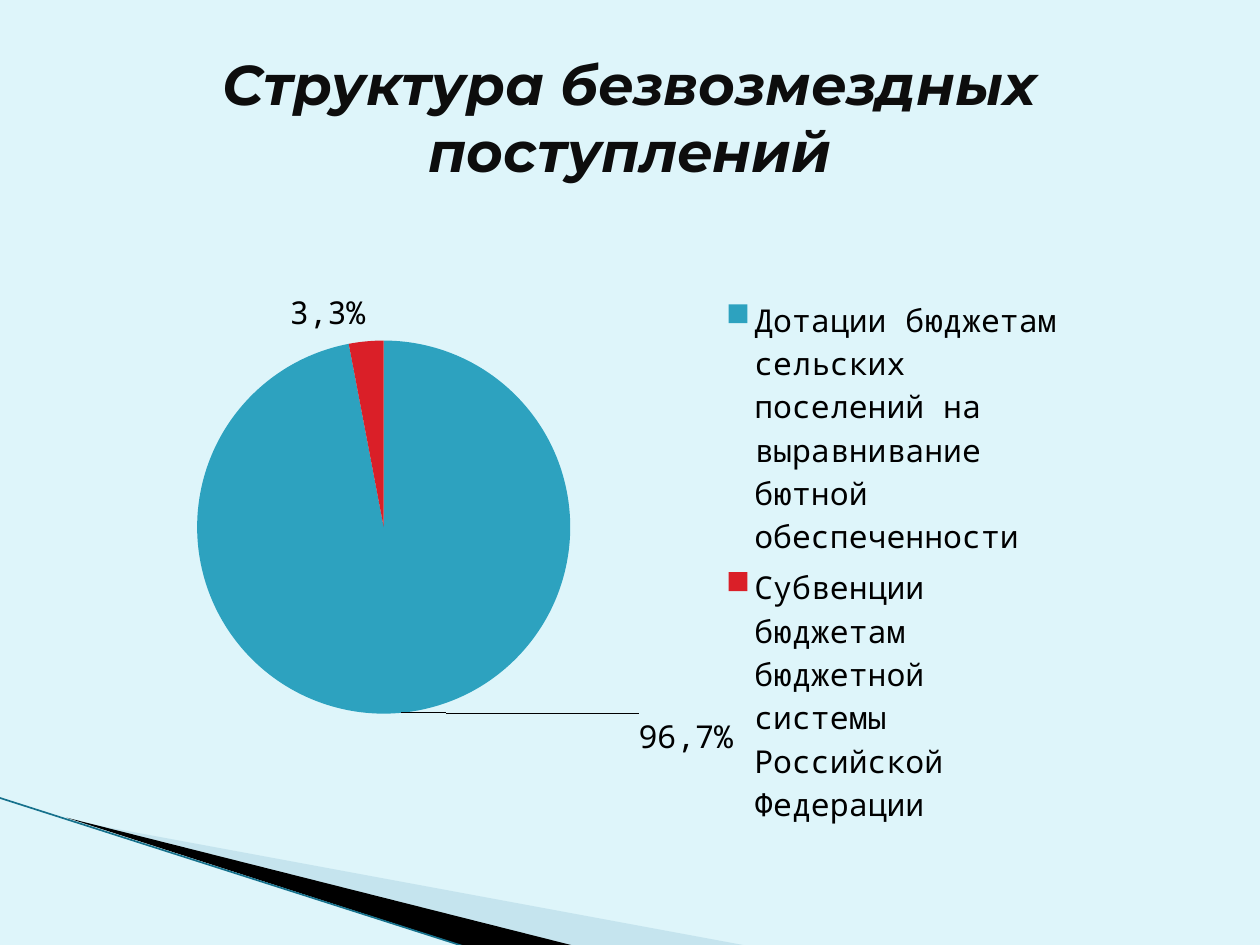
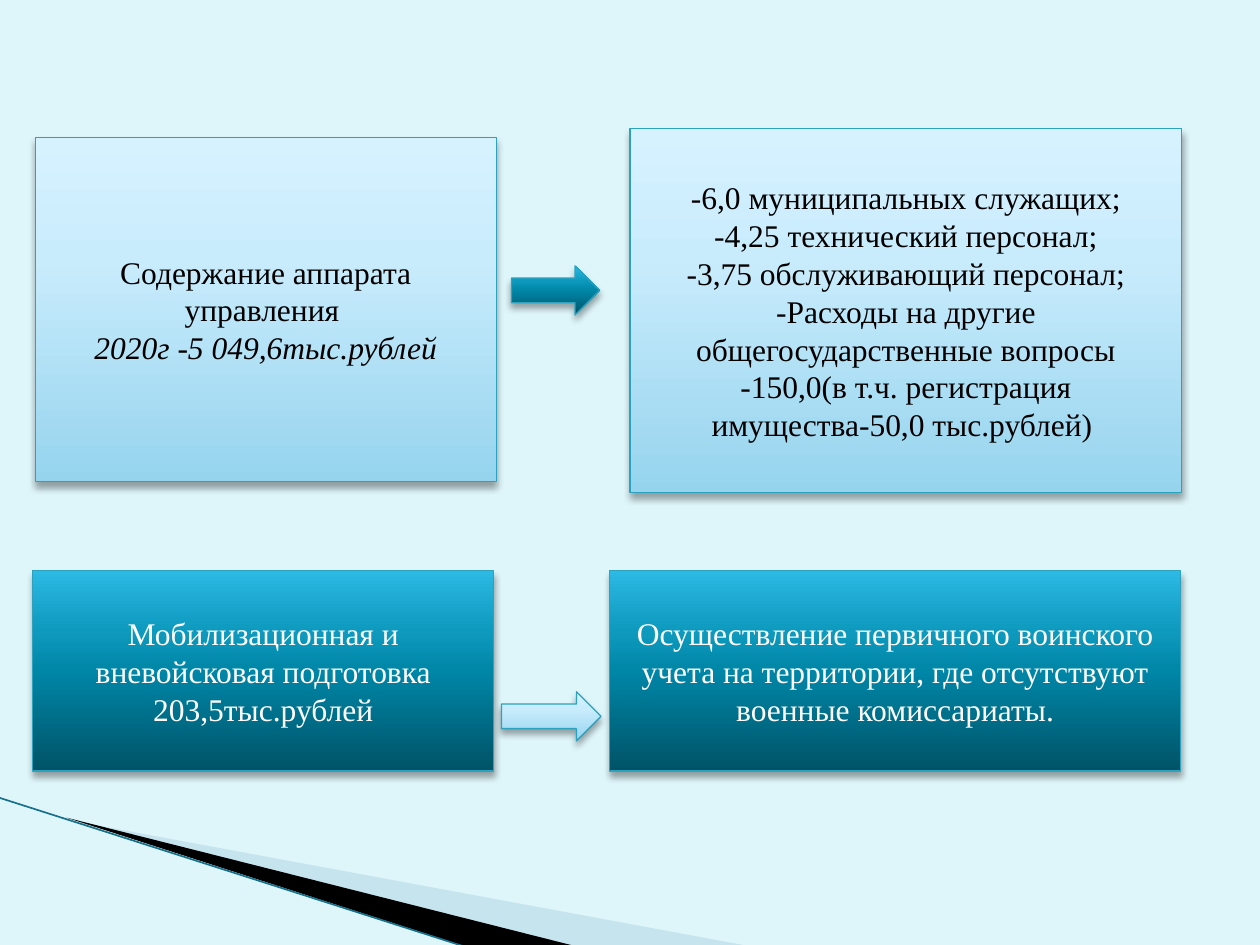
from dataclasses import dataclass

from lxml.etree import SubElement as Sub
from pptx import Presentation
from pptx.chart.data import CategoryChartData as Data
from pptx.dml.color import RGBColor as Rgb
from pptx.enum.chart import XL_CHART_TYPE as Kind, XL_LEGEND_POSITION as Side
from pptx.enum.chart import XL_LABEL_POSITION as Spot
from pptx.enum.shapes import MSO_CONNECTOR as Link, MSO_SHAPE as Form
from pptx.enum.text import MSO_ANCHOR as Anchor, PP_ALIGN as Align
from pptx.oxml.ns import qn
from pptx.util import Inches, Pt


@dataclass(frozen=True)
class Theme:
    """Colours, fonts and type sizes of the deck."""
    back: str = "DEF5FA"
    ink: str = "000000"
    white: str = "FFFFFF"
    head: str = "0D0D0D"
    pale: str = "A0CBDC"
    edge: str = "16718C"
    teal: str = "2DA2BF"
    red: str = "DA1F28"
    light: tuple = ((0, "96D4EE"), (65, "C9ECFC"), (100, "D7F2FF"))
    dark: tuple = ((0, "005367"), (50, "0086A7"), (70, "0E9ABE"), (100, "2CB9E3"))
    title: str = "Montserrat"
    mono: str = "Noto Sans Mono"
    serif: str = "Times New Roman"
    big: int = 32
    body: int = 18
    thin: float = 0.75


LOOK = Theme()


def put(item, vals):
    """Set attributes from a dict."""
    for key, val in vals.items():
        setattr(item, key, val)


def style(font, name, color, size=LOOK.body, **more):
    """Format a font."""
    put(font, {"name": name, "size": Pt(size), **more})
    font.color.rgb = Rgb.from_string(color)


def paint(fill, color):
    """Give a solid fill."""
    fill.solid()
    fill.fore_color.rgb = Rgb.from_string(color)


def node(up, tag, **vals):
    """Add a child element with attributes."""
    return Sub(up, qn(tag), {key: str(val) for key, val in vals.items()})


def place(up, index, **vals):
    """Insert a manual chart layout."""
    for old in up.findall(qn("c:layout")):
        up.remove(old)
    outer = node(up, "c:layout")
    inner = node(outer, "c:manualLayout")
    for key, val in vals.items():
        node(inner, f"c:{key}", val=val)
    up.insert(index, outer)


def facet(slide, box, points, color, alpha=None):
    """Draw one filled outline of the corner band."""
    left, top = box
    spots = [(Inches(left + x), Inches(top + y)) for x, y in points]
    pen = slide.shapes.build_freeform(*spots[0])
    pen.add_line_segments(spots[1:], close=True)
    shape = pen.convert_to_shape()
    shape.shadow.inherit = False
    paint(shape.fill, color)
    shape.line.fill.background()
    if alpha:
        tint = shape.element.spPr.find(".//" + qn("a:srgbClr"))
        node(tint, "a:alpha", val=alpha * 1000)
    return shape


def band(slide, master, box):
    """Build the corner band and move it to the master."""
    left, top = box
    pale = facet(slide, box, [(0.55, 0.18), (5.95, 1.18), (4.56, 1.18)], LOOK.pale, 40)
    black = facet(slide, box, [(0.53, 0.16), (4.57, 1.18), (3.72, 1.19)], LOOK.ink)
    ends = (left - 0.01, top, left + 3.71, top + 1.19)
    line = slide.shapes.add_connector(Link.STRAIGHT, *map(Inches, ends))
    line.line.width = Pt(0.95)
    line.line.color.rgb = Rgb.from_string(LOOK.edge)
    node(line.element.spPr, "a:effectLst")
    tree = master.element.cSld.spTree
    for num, part in enumerate((pale, black, line), 20):
        part.element.xpath(".//p:cNvPr")[0].set("id", str(num))
        tree.append(part.element)


def heading(slide, box, text):
    """Place and format the title."""
    title = slide.shapes.title
    put(title, dict(zip(("left", "top", "width", "height"), map(Inches, box))))
    frame = title.text_frame
    put(frame, {"text": text, "vertical_anchor": Anchor.MIDDLE, "word_wrap": True})
    para = frame.paragraphs[0]
    para.alignment = Align.CENTER
    style(para.runs[0].font, LOOK.title, LOOK.head, LOOK.big, bold=True, italic=True)


def pie(slide, box, parts):
    """Build the pie chart with its legend and labels."""
    data = Data()
    data.categories = [name for name, *_ in parts]
    data.add_series("Series 1", [val for _, val, *_ in parts])
    chart = slide.shapes.add_chart(Kind.PIE, *map(Inches, box), data).chart
    put(chart, {"has_title": False, "has_legend": True})
    style(chart.font, LOOK.mono, LOOK.ink)
    put(chart.legend, {"position": Side.RIGHT, "include_in_layout": False})
    plot = chart.plots[0]
    plot.vary_by_categories = True
    for num, (_, _, text, color, shift) in enumerate(parts):
        point = plot.series[0].points[num]
        paint(point.format.fill, color)
        label = point.data_label
        label.text_frame.text = text
        style(label.text_frame.paragraphs[0].runs[0].font, LOOK.mono, LOOK.ink)
        label.position = Spot.OUTSIDE_END
        if shift:
            mark = chart.element.xpath(".//c:dLbl")[num]
            place(mark, 1, x=shift[0], y=shift[1])
    area = chart.element.xpath(".//c:plotArea")[0]
    place(area, 0, layoutTarget="inner", xMode="edge", yMode="edge",
          x=0.14, y=0.15, w=0.37, h=0.59)
    key = chart.element.xpath(".//c:legend")[0]
    place(key, 1, xMode="edge", yMode="edge", x=0.67, y=0.07, w=0.32, h=0.86)


def panel(slide, box, stops, form=Form.RECTANGLE):
    """Draw a shape with a gradient, an outline and a soft shadow."""
    shape = slide.shapes.add_shape(form, *map(Inches, box))
    shape.shadow.inherit = False
    shape.line.width = Pt(LOOK.thin)
    shape.line.color.rgb = Rgb.from_string(LOOK.teal)
    shape.fill.gradient()
    shape.fill.gradient_angle = 90
    prop = shape.element.spPr
    ramp = prop.find(".//" + qn("a:gsLst"))
    for old in list(ramp):
        ramp.remove(old)
    for pos, color in stops:
        node(node(ramp, "a:gs", pos=pos * 1000), "a:srgbClr", val=color)
    cast = node(prop.find(qn("a:effectLst")), "a:outerShdw", blurRad=Pt(4),
                dist=Pt(3), dir=5400000, algn="ctr", rotWithShape=0)
    node(node(cast, "a:srgbClr", val=LOOK.ink), "a:alpha", val=35000)
    return shape


def card(slide, box, stops, color, lines, slant=()):
    """Draw a panel with centred lines of text."""
    frame = panel(slide, box, stops).text_frame
    put(frame, {"text": "\n".join(lines), "word_wrap": True,
                "vertical_anchor": Anchor.MIDDLE})
    for num, para in enumerate(frame.paragraphs):
        para.alignment = Align.CENTER
        style(para.runs[0].font, LOOK.serif, color, italic=num in slant)


def income(slide):
    """Fill the slide on the structure of receipts."""
    pie(slide, (0.39, 1.95, 8.17, 5.02), [
        ("Дотации бюджетам сельских поселений на выравнивание бютной обеспеченности",
         97, "96,7%", LOOK.teal, (0.23, -0.01)),
        ("Субвенции бюджетам бюджетной системы Российской Федерации",
         3, "3,3%", LOOK.red, None),
    ])
    heading(slide, (0.5, 0.3, 9, 1.25), "Структура безвозмездных поступлений")


def costs(slide):
    """Fill the slide on the items of spending."""
    card(slide, (0.28, 1.09, 3.66, 2.73), LOOK.light, LOOK.ink,
         ["Содержание аппарата управления ", "2020г -5 049,6тыс.рублей"], slant=(1,))
    card(slide, (0.26, 4.53, 3.66, 1.59), LOOK.dark, LOOK.white,
         ["Мобилизационная и вневойсковая подготовка", "203,5тыс.рублей"])
    card(slide, (5, 1.02, 4.38, 2.89), LOOK.light, LOOK.ink,
         ["-6,0 муниципальных служащих;", "-4,25 технический персонал;",
          "-3,75 обслуживающий персонал;",
          "-Расходы на другие общегосударственные вопросы -150,0"
          "(в т.ч. регистрация имущества-50,0 тыс.рублей) "])
    card(slide, (4.84, 4.53, 4.53, 1.59), LOOK.dark, LOOK.white,
         ["Осуществление первичного воинского учета на территории, "
          "где отсутствуют военные комиссариаты."])
    panel(slide, (4.06, 2.11, 0.7, 0.39), LOOK.dark, Form.RIGHT_ARROW)
    panel(slide, (3.98, 5.49, 0.79, 0.39), LOOK.light, Form.RIGHT_ARROW)


def main():
    """Build and save the deck."""
    deck = Presentation()
    put(deck, {"slide_width": Inches(10), "slide_height": Inches(7.5)})
    master = deck.slide_master
    paint(master.background.fill, LOOK.back)
    first = deck.slides.add_slide(deck.slide_layouts[5])
    band(first, master, (0, 6.33))
    income(first)
    costs(deck.slides.add_slide(deck.slide_layouts[6]))
    deck.save("out.pptx")


if __name__ == "__main__":
    main()
